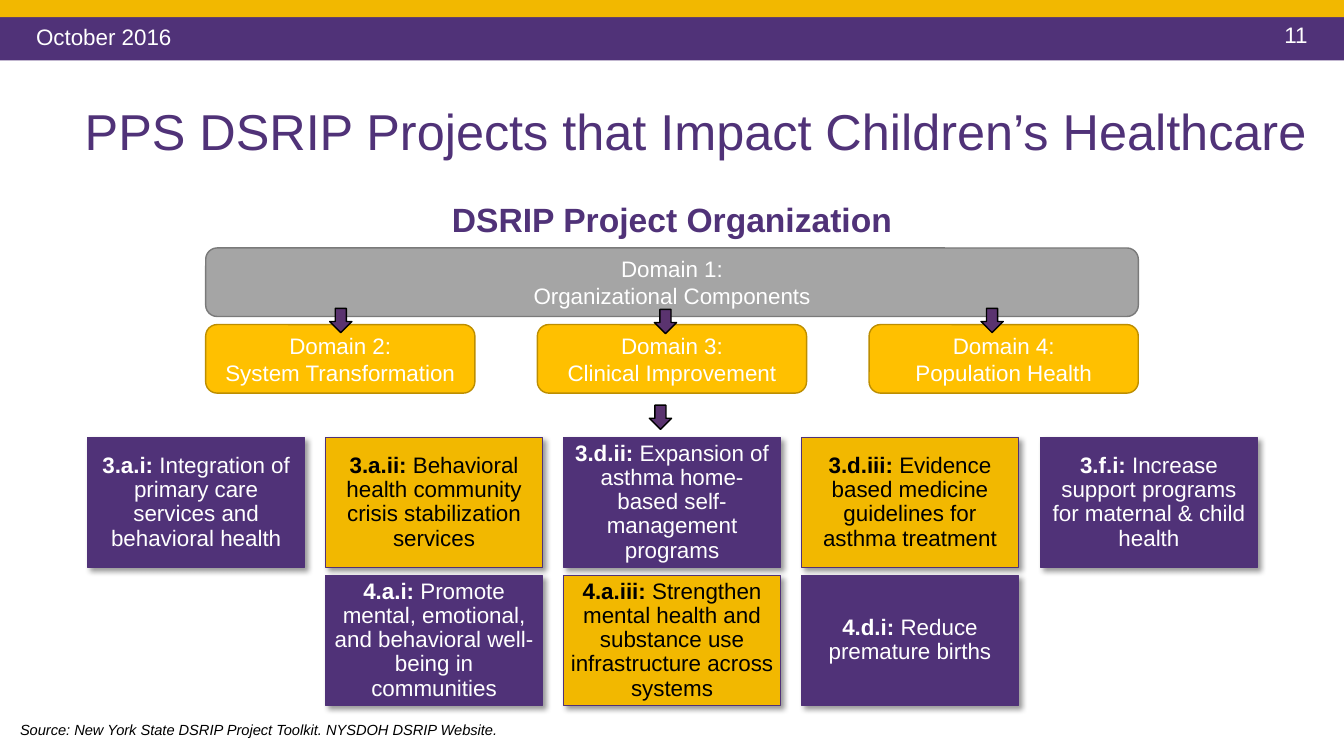
from lxml import etree
from pptx import Presentation
from pptx.dml.color import RGBColor
from pptx.enum.shapes import MSO_SHAPE
from pptx.enum.text import MSO_ANCHOR, MSO_AUTO_SIZE, PP_ALIGN
from pptx.oxml.ns import qn
from pptx.util import Pt

RECT, ROUND, DOWN = (MSO_SHAPE.RECTANGLE, MSO_SHAPE.ROUNDED_RECTANGLE,
                     MSO_SHAPE.DOWN_ARROW)
TOP, MIDDLE = MSO_ANCHOR.TOP, MSO_ANCHOR.MIDDLE
LEFT, CENTER = PP_ALIGN.LEFT, PP_ALIGN.CENTER
FIXED = MSO_AUTO_SIZE.NONE

SCALE = 9144  # EMU in one px, 100 px to the inch
WIDE, HIGH = 1333, 750
PURPLE, GOLD, WHITE, BLACK = "503278", "F2B800", "FFFFFF", "000000"
AMBER, GRAY, PLUM = "FFC000", "A5A5A5", "5A336F"
PAD = (10, 5, 10, 5)

DOMAINS = [
    (2, "System Transformation"),
    (3, "Clinical Improvement"),
    (4, "Population Health"),
]
# column, row, code, text
CARDS = [
    (0, 0, "3.a.i:",
     " Integration of primary care services and behavioral health"),
    (1, 0, "3.a.ii:",
     " Behavioral health community crisis stabilization services"),
    (2, 0, "3.d.ii: ",
     "Expansion of asthma home-based self-management programs"),
    (3, 0, "3.d.iii: ",
     "Evidence based medicine guidelines for asthma treatment"),
    (4, 0, "3.f.i:",
     " Increase support programs for maternal & child health"),
    (1, 1, "4.a.i: ",
     "Promote mental, emotional, and behavioral well-being in communities"),
    (2, 1, "4.a.iii: ",
     "Strengthen mental health and substance use infrastructure across systems"),
    (3, 1, "4.d.i:", " Reduce premature births"),
]
ARROWS = [(327, 306), (649, 307), (973, 306), (644, 402)]


def px(count):
    return int(count * SCALE)


def color(code):
    return RGBColor.from_string(code)


class Deck:
    """Holds the font and the current slide, and draws its elements."""

    font = "Arial"

    def __init__(self):
        self.prs = Presentation()
        self.prs.slide_width, self.prs.slide_height = px(WIDE), px(HIGH)
        self.slide = self.prs.slides.add_slide(self.prs.slide_layouts[5])

    def text(self, shape, paras, size, ink, align=LEFT, anchor=MIDDLE,
             pad=PAD, space=None, italic=False):
        """Fill a shape with paragraphs, each a list of (text, bold) runs."""
        frame = shape.text_frame
        frame.auto_size, frame.word_wrap = FIXED, True
        frame.vertical_anchor = anchor
        (frame.margin_left, frame.margin_top,
         frame.margin_right, frame.margin_bottom) = map(px, pad)
        for i, runs in enumerate(paras):
            para = frame.add_paragraph() if i else frame.paragraphs[0]
            para.alignment = align
            if space:
                para.line_spacing = space
            for words, bold in runs:
                run = para.add_run()
                run.text = words
                run.font.name, run.font.size = self.font, Pt(size)
                run.font.bold, run.font.italic = bold, italic
                run.font.color.rgb = color(ink)

    def title(self, box, words):
        shape = self.slide.shapes.title
        shape.left, shape.top, shape.width, shape.height = map(px, box)
        self.text(shape, [[(words, False)]], 36, PURPLE, space=0.9)

    def label(self, box, words, size, ink, **style):
        shape = self.slide.shapes.add_textbox(*map(px, box))
        self.text(shape, [[(words, False)]], size, ink, **style)

    def shape(self, kind, box, fill=None, line=None):
        shape = self.slide.shapes.add_shape(kind, *map(px, box))
        shape.shadow.inherit = False
        if fill:
            shape.fill.solid()
            shape.fill.fore_color.rgb = color(fill)
        else:
            shape.fill.background()
        if line:
            shape.line.color.rgb = color(line)
            shape.line.width = Pt(1)
        else:
            shape.line.fill.background()
        return shape

    def shade(self, shape):
        """Add a soft shadow at the lower right."""
        effects = shape.element.spPr.find(qn("a:effectLst"))
        outer = etree.SubElement(
            effects, qn("a:outerShdw"), blurRad=str(Pt(4)), dist=str(Pt(3)),
            dir="2700000", algn="tl", rotWithShape="0")
        tint = etree.SubElement(outer, qn("a:srgbClr"), val=BLACK)
        etree.SubElement(tint, qn("a:alpha"), val="40000")

    def card(self, box, code, words, fill, ink):
        shape = self.shape(RECT, box, fill, PURPLE)
        self.shade(shape)
        self.text(shape, [[(code, True), (words, False)]], 16, ink, CENTER,
                  pad=(7, 7, 7, 7), space=0.9)

    def domain(self, box, number, name, fill, line):
        shape = self.shape(ROUND, box, fill, line)
        paras = [[(f"Domain {number}:", False)], [(name, False)]]
        self.text(shape, paras, 16, WHITE, CENTER)


def main():
    deck = Deck()
    deck.shape(RECT, (0, 17, WIDE, 43), PURPLE)
    deck.shape(RECT, (0, 0, WIDE, 17), GOLD)
    deck.label((1264, 16, 48, 37), "11", 16, WHITE, anchor=TOP)
    deck.label((26, 16, 600, 40), "October 2016", 16, WHITE,
               pad=(10, 0, 10, 0))
    deck.title((74, 95, 1259, 76),
               "PPS DSRIP Projects that Impact Children’s Healthcare")

    for col, row, code, words in CARDS:
        fill, ink = (GOLD, BLACK) if (col + row) % 2 else (PURPLE, WHITE)
        box = (87 + 945 * col // 4, 434 + 137 * row, 215, 129)
        deck.card(box, code, words, fill, ink)

    deck.label((10, 710, 598, 28),
               "Source: New York State DSRIP Project Toolkit. "
               "NYSDOH DSRIP Website.",
               10.5, BLACK, anchor=TOP, italic=True)

    frame = deck.shape(ROUND, (166, 181, 1001, 226))
    deck.text(frame, [[("DSRIP Project Organization", True)]], 24, PURPLE,
              CENTER, TOP)
    for i, (number, name) in enumerate(DOMAINS):
        deck.domain((204 + 329 * i, 322, 267, 68), number, name, AMBER,
                    "BD8E00")
    deck.domain((204, 246, 925, 68), 1, "Organizational Components", GRAY,
                "7A7A7A")
    for left, top in ARROWS:
        deck.shape(DOWN, (left, top, 22, 24), PLUM, BLACK)

    deck.prs.save("out.pptx")


if __name__ == "__main__":
    main()
